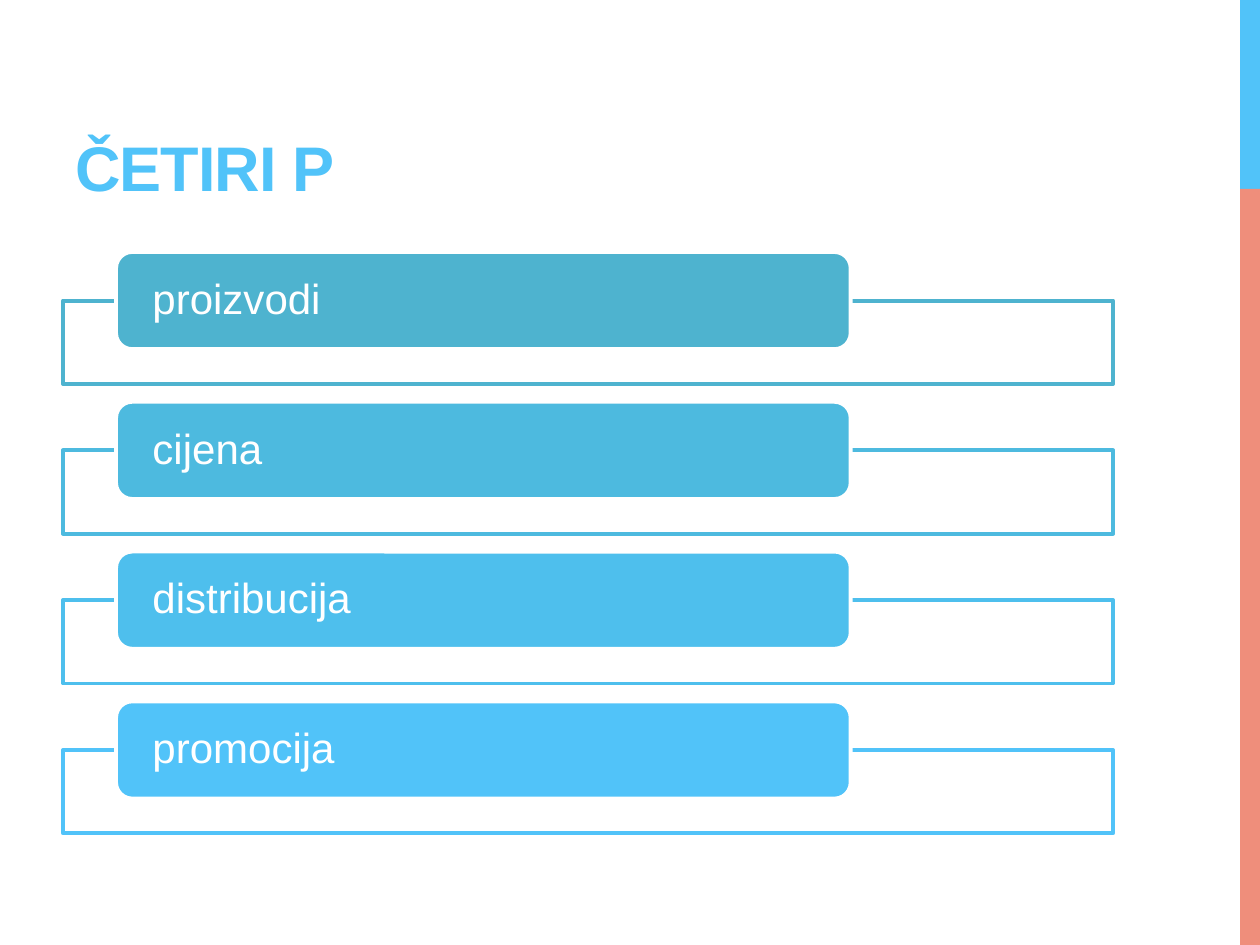
from pptx import Presentation
from pptx.dml.color import RGBColor
from pptx.enum.shapes import MSO_SHAPE
from pptx.enum.text import MSO_ANCHOR, PP_ALIGN
from pptx.util import Cm, Pt

COLORS = {
    "white": "FFFFFF",
    "sky": "51C3F9",
    "coral": "EF8E7B",
    "proizvodi": "4EB3CF",
    "cijena": "4DBADF",
    "distribucija": "4EBFED",
    "promocija": "51C3F9",
}
FOUR_P = ["proizvodi", "cijena", "distribucija", "promocija"]

FIRST_TOP = 5.08
ROW_PITCH = 3.02
LABEL_HEIGHT = 1.96


def rgb(name):
    return RGBColor.from_string(COLORS[name])


def add_block(slide, preset, left, top, width, height, fill, line=None):
    block = slide.shapes.add_shape(preset, Cm(left), Cm(top), Cm(width), Cm(height))
    block.shadow.inherit = False
    block.fill.solid()
    block.fill.fore_color.rgb = rgb(fill)
    if line:
        block.line.color.rgb = rgb(line)
        block.line.width = Pt(2.25)
    else:
        block.line.fill.background()
    return block


def style_text(paragraph, size, color, bold=False):
    paragraph.alignment = PP_ALIGN.LEFT
    paragraph.font.name = "Arial"
    paragraph.font.size = Pt(size)
    paragraph.font.bold = bold
    paragraph.font.color.rgb = rgb(color)


def add_title(slide, text):
    title = slide.shapes.add_textbox(Cm(1.27), Cm(0.43), Cm(16.08), Cm(3.81))
    frame = title.text_frame
    frame.word_wrap = True
    frame.vertical_anchor = MSO_ANCHOR.BOTTOM
    heading = frame.paragraphs[0]
    run = heading.add_run()
    run.text = text
    style_text(heading, 36, "sky", bold=True)
    # Slightly tightened letter spacing, in hundredths of a point
    run.font._element.set("spc", "-60")


def add_item(slide, text, top):
    # Outlined frame starts at the middle of the label
    add_block(slide, MSO_SHAPE.RECTANGLE, 1.27, top + LABEL_HEIGHT / 2,
              21.17, 1.68, "white", text)
    label = add_block(slide, MSO_SHAPE.ROUNDED_RECTANGLE, 2.34, top,
                      14.81, LABEL_HEIGHT, text, "white")
    frame = label.text_frame
    frame.word_wrap = True
    frame.vertical_anchor = MSO_ANCHOR.MIDDLE
    frame.margin_left = frame.margin_right = Cm(0.64)
    frame.margin_top = frame.margin_bottom = 0
    paragraph = frame.paragraphs[0]
    paragraph.text = text
    paragraph.line_spacing = 0.9
    style_text(paragraph, 24, "white")


def main():
    deck = Presentation()
    deck.slide_width, deck.slide_height = Cm(25.4), Cm(19.05)
    slide = deck.slides.add_slide(deck.slide_layouts[6])

    # Coloured strip on the right edge
    add_block(slide, MSO_SHAPE.RECTANGLE, 25, 0, 0.4, 3.81, "sky")
    add_block(slide, MSO_SHAPE.RECTANGLE, 25, 3.81, 0.4, 15.24, "coral")

    add_title(slide, "ČETIRI P")

    # The four elements of the marketing mix
    for row, item in enumerate(FOUR_P):
        add_item(slide, item, FIRST_TOP + row * ROW_PITCH)

    deck.save("out.pptx")


if __name__ == "__main__":
    main()
